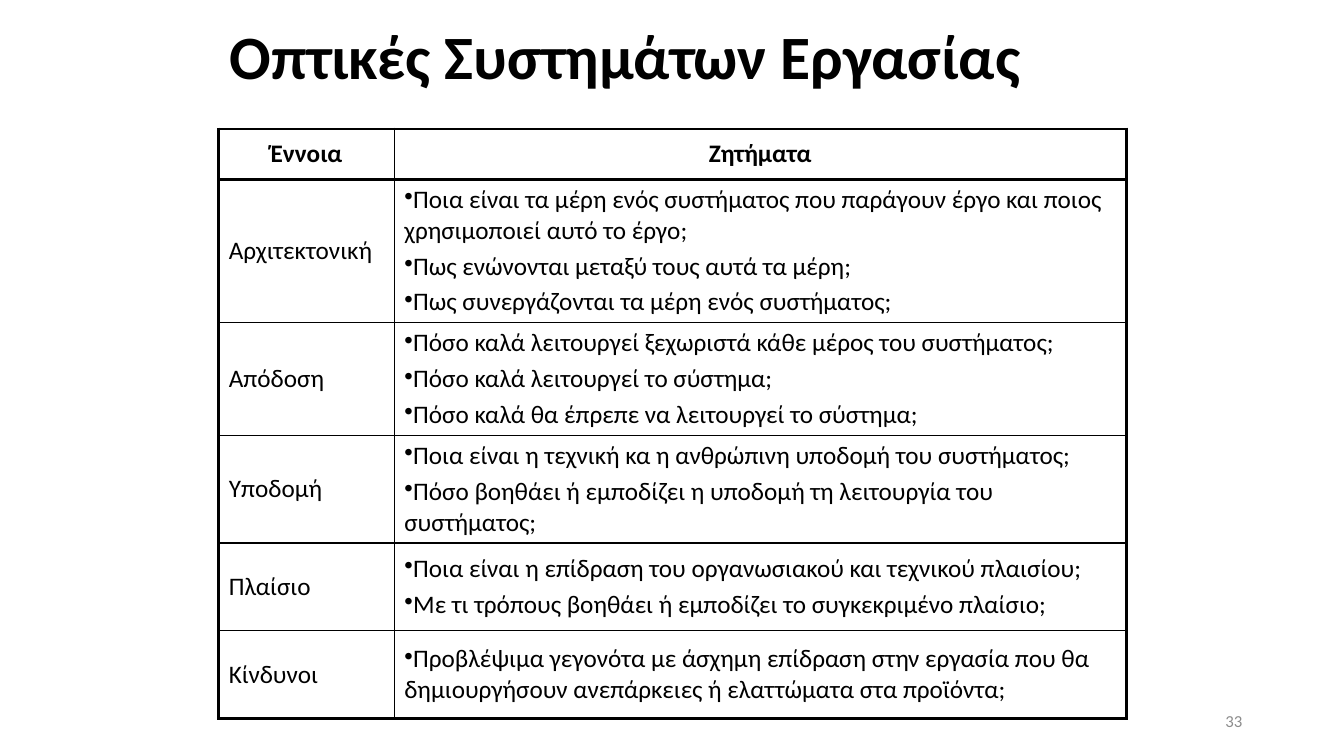
import pptx
import pptx.dml.color
import pptx.enum.text
import pptx.oxml
import pptx.oxml.ns
import pptx.util
from dataclasses import dataclass

Inches = pptx.util.Inches
Pt = pptx.util.Pt
Align = pptx.enum.text.PP_ALIGN
MIDDLE = pptx.enum.text.MSO_ANCHOR.MIDDLE


@dataclass(frozen=True)
class Theme:
    font: str = "Calibri"
    black: str = "000000"
    white: str = "FFFFFF"
    gray: str = "8C8C8C"
    title_size: int = 44
    table_size: int = 18
    number_size: int = 12


theme = Theme()


def write_paragraph(paragraph, text, size, color=theme.black, bold=False, align=Align.LEFT):
    paragraph.alignment = align
    run = paragraph.add_run()
    run.text = text
    font_format = {"name": theme.font, "size": Pt(size), "bold": bold}
    for attribute, value in font_format.items():
        setattr(run.font, attribute, value)
    run.font.color.rgb = pptx.dml.color.RGBColor.from_string(color)


def add_border(cell, tag, width):
    """Draw one edge of a cell; tag is lnL, lnR, lnT or lnB, width is in points."""
    cell._tc.get_or_add_tcPr().append(pptx.oxml.parse_xml(
        f'<a:{tag} {pptx.oxml.ns.nsdecls("a")} w="{Pt(width)}"><a:solidFill>'
        f'<a:srgbClr val="{theme.black}"/></a:solidFill></a:{tag}>'))


header = ["Έννοια", "Ζητήματα"]
concepts = [
    ("Αρχιτεκτονική", [
        "Ποια είναι τα μέρη ενός συστήματος που παράγουν έργο και ποιος χρησιμοποιεί αυτό το έργο;",
        "Πως ενώνονται μεταξύ τους αυτά τα μέρη;",
        "Πως συνεργάζονται τα μέρη ενός συστήματος;"]),
    ("Απόδοση", [
        "Πόσο καλά λειτουργεί ξεχωριστά κάθε μέρος του συστήματος;",
        "Πόσο καλά λειτουργεί το σύστημα;",
        "Πόσο καλά θα έπρεπε να λειτουργεί το σύστημα;"]),
    ("Υποδομή", [
        "Ποια είναι η τεχνική κα η ανθρώπινη υποδομή του συστήματος;",
        "Πόσο βοηθάει ή εμποδίζει η υποδομή τη λειτουργία του συστήματος;"]),
    ("Πλαίσιο", [
        "Ποια είναι η επίδραση του οργανωσιακού και τεχνικού πλαισίου;",
        "Με τι τρόπους βοηθάει ή εμποδίζει το συγκεκριμένο πλαίσιο;"]),
    ("Κίνδυνοι", [
        "Προβλέψιμα γεγονότα με άσχημη επίδραση στην εργασία που θα "
        "δημιουργήσουν ανεπάρκειες ή ελαττώματα στα προϊόντα;"]),
]
column_widths = [1.74, 7.26]
row_heights = [0.5, 1.42, 1.12, 1.06, 0.87, 0.87]
column_lines = [2.25, 1, 2.25]
row_lines = [2.25, 3, 1, 1, 1, 1, 2.25]

presentation = pptx.Presentation()
presentation.slide_width = Inches(13.33)
presentation.slide_height = Inches(7.5)
slide = presentation.slides.add_slide(presentation.slide_layouts.get_by_name("Title Only"))

# Title
title = slide.shapes.title
title_box = {"left": 2.18, "top": 0.13, "width": 9, "height": 0.93}
for attribute, value in title_box.items():
    setattr(title, attribute, Inches(value))
title.text_frame.vertical_anchor = MIDDLE
title_paragraph = title.text_frame.paragraphs[0]
title_paragraph.line_spacing = 0.9
write_paragraph(title_paragraph, "Οπτικές Συστημάτων Εργασίας", theme.title_size, bold=True)

# Table of concepts and their issues
table = slide.shapes.add_table(
    len(row_heights), len(column_widths), Inches(2.17), Inches(1.28),
    Inches(sum(column_widths)), Inches(sum(row_heights))).table
table.first_row = False
table.horz_banding = False
for column, width in zip(table.columns, column_widths):
    column.width = Inches(width)
for row, height in zip(table.rows, row_heights):
    row.height = Inches(height)

table_rows = [[[text] for text in header]] + [[[name], issues] for name, issues in concepts]
for row_index, cell_texts in enumerate(table_rows):
    is_header = row_index == 0
    for column_index, texts in enumerate(cell_texts):
        cell = table.cell(row_index, column_index)
        cell.vertical_anchor = MIDDLE
        borders = {
            "lnL": column_lines[column_index], "lnR": column_lines[column_index + 1],
            "lnT": row_lines[row_index], "lnB": row_lines[row_index + 1]}
        for tag, width in borders.items():
            add_border(cell, tag, width)
        cell.fill.solid()
        cell.fill.fore_color.rgb = pptx.dml.color.RGBColor.from_string(theme.white)

        for text_index, text in enumerate(texts):
            if text_index == 0:
                paragraph = cell.text_frame.paragraphs[0]
            else:
                paragraph = cell.text_frame.add_paragraph()
            if column_index == 1 and not is_header:
                paragraph._p.get_or_add_pPr().append(pptx.oxml.parse_xml(
                    f'<a:buChar {pptx.oxml.ns.nsdecls("a")} char="•"/>'))
            if text_index > 0:
                paragraph.space_before = Pt(0.2 * theme.table_size)
            write_paragraph(paragraph, text, theme.table_size, bold=is_header,
                            align=Align.CENTER if is_header else Align.LEFT)

# Slide number
number_frame = slide.shapes.add_textbox(
    Inches(9.42), Inches(6.95), Inches(3), Inches(0.4)).text_frame
number_frame.word_wrap = True
number_frame.vertical_anchor = MIDDLE
write_paragraph(number_frame.paragraphs[0], "33", theme.number_size, theme.gray,
                align=Align.RIGHT)

presentation.save("out.pptx")
